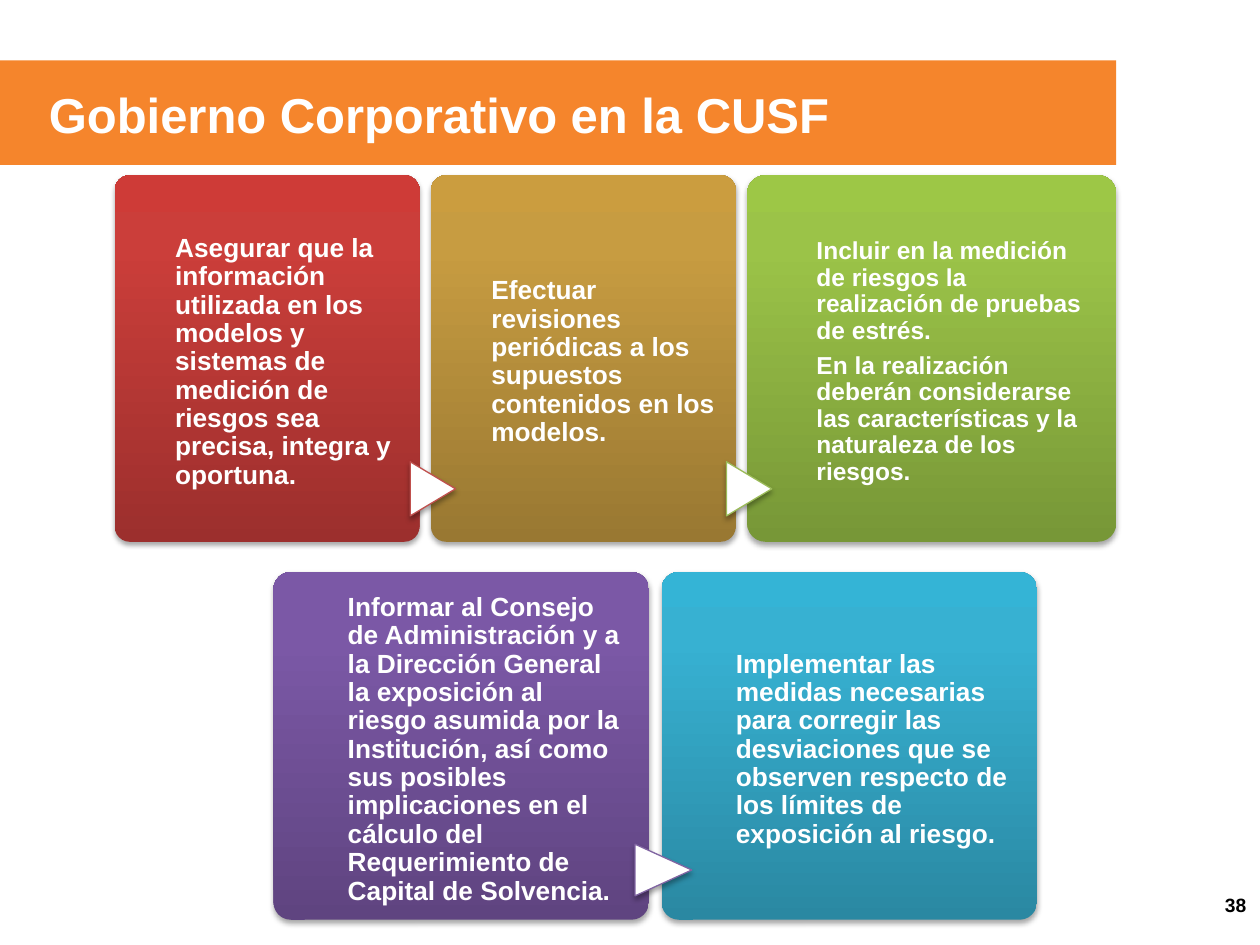
from copy import deepcopy

from lxml import etree
from pptx import Presentation
from pptx.dml.color import RGBColor
from pptx.enum.shapes import MSO_SHAPE as Preset
from pptx.enum.text import MSO_ANCHOR as Anchor, PP_ALIGN as Align
from pptx.oxml import parse_xml
from pptx.oxml.ns import nsdecls, qn
from pptx.util import Inches, Pt

COLORS = {
    "banner": "F5852C", "white": "FFFFFF", "black": "000000",
    "red_edge": "C0504D", "green_edge": "9BBB59", "purple_edge": "8064A2",
}
# Each gradient runs from the bottom of the card to its top.
GRADIENTS = {
    "red": ("9C2F2D", "CB3E3A", "CE3B37"),
    "gold": ("997832", "C79C41", "CB9D3F"),
    "green": ("779737", "9BC348", "9DC746"),
    "purple": ("5F4480", "7B58A6", "7C57A8"),
    "blue": ("2A88A2", "37B1D2", "34B4D6"),
}
STOPS = (0, 0.8, 1)

ROWS = [
    {
        "left": 0.91, "top": 1.39, "height": 2.91, "gap": 0.09,
        "arrow": {"shift": -0.2, "top": 3.7, "width": 0.43, "height": 0.36},
        "cards": [
            {"hue": "red", "width": 2.42, "indent": 0.48, "text_width": 1.81, "size": 15,
             "text": ["Asegurar que la información utilizada en los modelos y sistemas "
                      "de medición de riesgos sea precisa, integra y oportuna."]},
            {"hue": "gold", "width": 2.42, "indent": 0.48, "text_width": 1.81, "size": 15,
             "edge": "red_edge",
             "text": ["Efectuar revisiones periódicas a los supuestos contenidos en "
                      "los modelos."]},
            {"hue": "green", "width": 2.93, "indent": 0.55, "text_width": 2.18, "size": 14,
             "edge": "green_edge",
             "text": ["Incluir en la medición de riesgos la realización de pruebas de "
                      "estrés.",
                      "En la realización deberán considerarse las características y la "
                      "naturaleza de los riesgos."]},
        ],
    },
    {
        "left": 2.17, "top": 4.54, "height": 2.76, "gap": 0.1,
        "arrow": {"shift": -0.19, "top": 6.68, "width": 0.41, "height": 0.45},
        "cards": [
            {"hue": "purple", "width": 2.98, "indent": 0.59, "text_width": 2.22, "size": 15,
             "text": ["Informar al Consejo de Administración y a la Dirección General la "
                      "exposición al riesgo asumida por la Institución, así como sus "
                      "posibles implicaciones en el cálculo del Requerimiento de Capital "
                      "de Solvencia."]},
            {"hue": "blue", "width": 2.98, "indent": 0.59, "text_width": 2.22, "size": 15,
             "edge": "purple_edge",
             "text": ["Implementar las medidas necesarias para corregir las desviaciones "
                      "que se observen respecto de los límites de exposición al riesgo."]},
        ],
    },
]


def rgb(name):
    return RGBColor.from_string(COLORS[name])


def set_all(target, values):
    for name, value in values.items():
        setattr(target, name, value)


def add_preset(shapes, preset, left, top, width, height):
    shape = shapes.add_shape(preset, *map(Inches, (left, top, width, height)))
    shape.shadow.inherit = False
    shape.line.fill.background()
    return shape


def add_soft_shadow(shape):
    effects = shape._element.spPr.find(qn("a:effectLst"))
    effects.append(parse_xml(
        f'<a:outerShdw {nsdecls("a")} blurRad="{Pt(3.1)}" dist="{Pt(1.8)}" '
        'dir="5400000" rotWithShape="0">'
        f'<a:srgbClr val="{COLORS["black"]}"><a:alpha val="35000"/></a:srgbClr>'
        '</a:outerShdw>'))


def fill_gradient(shape, hexes):
    shape.fill.gradient()
    shape.fill.gradient_angle = 90
    stop_list = next(shape._element.spPr.iter(qn("a:gsLst")))
    stop_list.append(deepcopy(stop_list[-1]))
    for stop, position, color in zip(shape.fill.gradient_stops, STOPS, hexes):
        stop.position = position
        stop.color.rgb = RGBColor.from_string(color)


def add_text(shapes, box, texts, size, color="white", frame_format=None,
             paragraph_format=None):
    frame = shapes.add_textbox(*map(Inches, box)).text_frame
    set_all(frame, {"word_wrap": True, **(frame_format or {})})
    for index, text in enumerate(texts):
        paragraph = frame.add_paragraph() if index else frame.paragraphs[0]
        paragraph.text = text
        set_all(paragraph, paragraph_format or {})
        font = paragraph.runs[0].font
        set_all(font, {"name": "Arial", "size": Pt(size), "bold": True})
        font.color.rgb = rgb(color)


def add_card(shapes, left, row, card):
    body = add_preset(shapes, Preset.ROUNDED_RECTANGLE, left, row["top"],
                      card["width"], row["height"])
    body.adjustments[0] = 0.05
    fill_gradient(body, GRADIENTS[card["hue"]])
    add_soft_shadow(body)
    if "edge" in card:
        add_arrow(shapes, left, row["arrow"], card["edge"])
    add_text(
        shapes, (left + card["indent"], row["top"], card["text_width"], row["height"]),
        card["text"], card["size"],
        frame_format={"vertical_anchor": Anchor.MIDDLE, "margin_left": 0,
                      "margin_right": 0, "margin_bottom": 0,
                      "margin_top": Inches(0.06)},
        paragraph_format={"line_spacing": 0.9, "space_after": Pt(0.35 * card["size"])})


def add_arrow(shapes, card_left, arrow, edge):
    """Triangle turned to point from the previous card into this one."""
    triangle = add_preset(shapes, Preset.FLOWCHART_EXTRACT, card_left + arrow["shift"],
                          arrow["top"], arrow["width"], arrow["height"])
    triangle.rotation = 90
    triangle.fill.solid()
    triangle.fill.fore_color.rgb = rgb("white")
    triangle.line.color.rgb = rgb(edge)
    triangle.line.width = Pt(0.75)
    add_soft_shadow(triangle)


def add_row(slide, row):
    shapes = slide.shapes.add_group_shape().shapes
    left = row["left"]
    for card in row["cards"]:
        add_card(shapes, left, row, card)
        left += card["width"] + row["gap"]


def add_header(slide):
    banner = add_preset(slide.shapes, Preset.RECTANGLE, 0, 0.48, 8.86, 0.83)
    banner.fill.solid()
    banner.fill.fore_color.rgb = rgb("banner")
    add_text(slide.shapes, (0.29, 0.62, 8.57, 0.57),
             ["Gobierno Corporativo en la CUSF"], 28)


def main():
    deck = Presentation()
    set_all(deck, {"slide_width": Inches(10), "slide_height": Inches(7.5)})
    slide = deck.slides.add_slide(deck.slide_layouts[6])
    add_header(slide)
    add_text(slide.shapes, (7.66, 6.98, 2.33, 0.4), ["38"], 11, "black",
             {"vertical_anchor": Anchor.MIDDLE}, {"alignment": Align.RIGHT})
    for row in ROWS:
        add_row(slide, row)
    deck.save("out.pptx")


if __name__ == "__main__":
    main()
